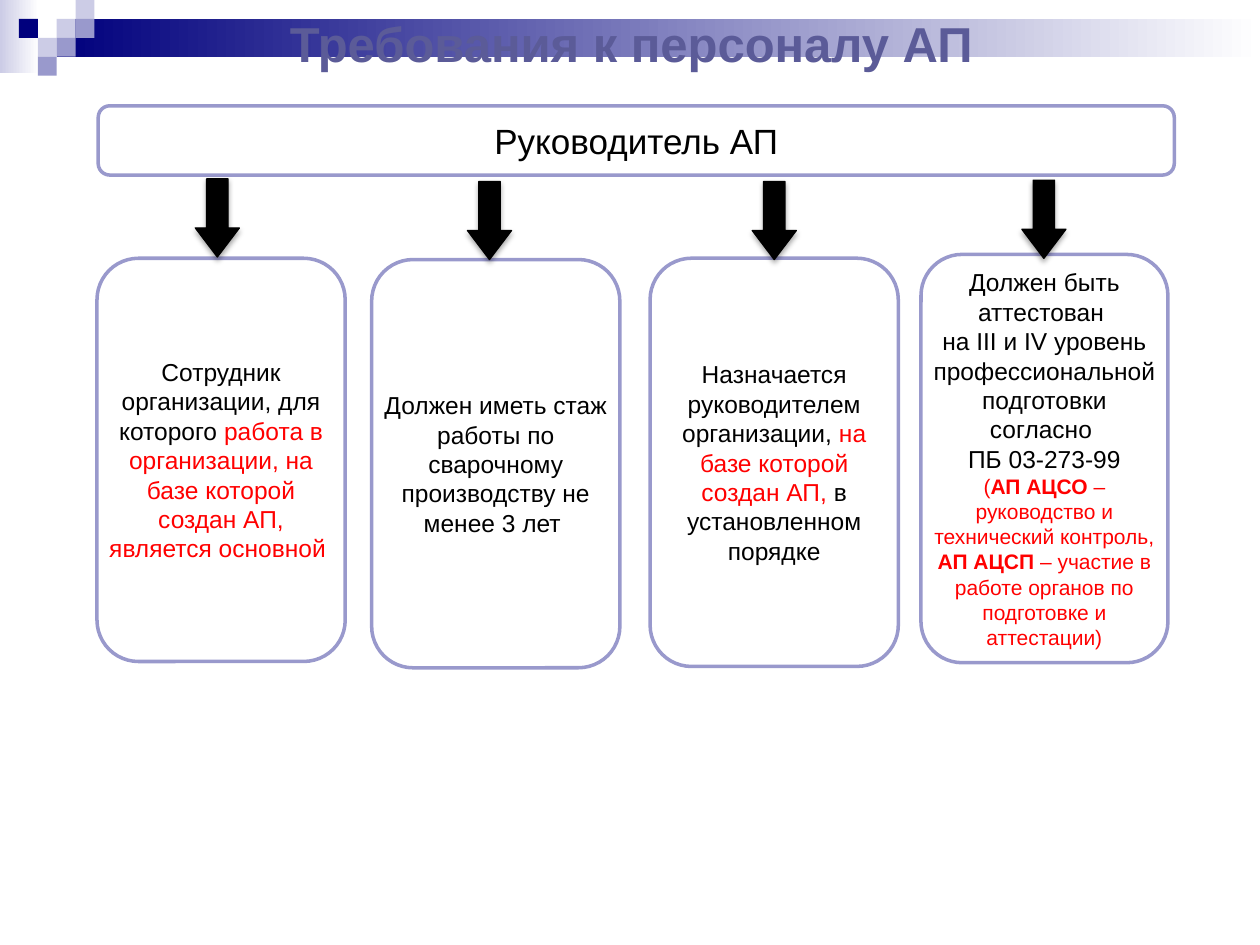
from lxml.etree import SubElement
from pptx import Presentation
from pptx.dml.color import RGBColor
from pptx.enum.shapes import MSO_SHAPE as SHAPE
from pptx.enum.text import MSO_ANCHOR as ANCHOR, MSO_AUTO_SIZE as FIT, PP_ALIGN as ALIGN
from pptx.oxml.ns import qn
from pptx.util import Inches, Pt

NAVY, LILAC, PALE, WHITE = "00007D", "9999CC", "CCCCE6", "FFFFFF"
TITLE, BLACK, RED = "5B5B98", "000000", "FF0000"
TILE_W, TILE_H = 1.5, 2


def rgb(value):
    return RGBColor.from_string(value)


class Deck:
    font = "Arial"

    def __init__(self, width, height):
        self.prs = Presentation()
        self.prs.slide_width, self.prs.slide_height = Inches(width), Inches(height)
        self.s = self.prs.slides.add_slide(self.prs.slide_layouts[5])

    def place(self, x, y, w, h):
        sw, sh = self.prs.slide_width, self.prs.slide_height
        return [round(v * full / 100) for v, full in ((x, sw), (y, sh), (w, sw), (h, sh))]

    def shape(self, kind, box, fill, line=None, width=1):
        sp = self.s.shapes.add_shape(kind, *self.place(*box))
        sp.shadow.inherit = False
        if fill:
            sp.fill.solid()
            sp.fill.fore_color.rgb = rgb(fill)
        if line:
            sp.line.color.rgb = rgb(line)
            sp.line.width = Pt(width)
        else:
            sp.line.fill.background()
        return sp

    def fade(self, box, start, end):
        sp = self.shape(SHAPE.RECTANGLE, box, None)
        sp.fill.gradient()
        sp.fill.gradient_angle = 0
        for stop, color, pos in zip(sp.fill.gradient_stops, (start, end), (0, 1)):
            stop.color.rgb = rgb(color)
            stop.position = pos

    def text(self, sp, runs):
        tf = sp.text_frame
        tf.word_wrap, tf.auto_size = True, FIT.NONE
        tf.vertical_anchor = ANCHOR.MIDDLE
        p = tf.paragraphs[0]
        p.alignment = ALIGN.CENTER
        for content, size, color, bold in runs:
            for i, part in enumerate(content.split("\n")):
                if i:
                    p.add_line_break()
                if not part:
                    continue
                r = p.add_run()
                r.text = part
                r.font.name, r.font.size, r.font.bold = self.font, Pt(size), bold
                r.font.color.rgb = rgb(color)
        return tf

    def title(self, box, content):
        sp = self.s.shapes.title
        sp.left, sp.top, sp.width, sp.height = self.place(*box)
        self.text(sp, [(content, 28, TITLE, True)])
        self.s.shapes._spTree.append(sp._element)

    def card(self, box, runs):
        sp = self.shape(SHAPE.ROUNDED_RECTANGLE, box, WHITE, LILAC, 2)
        tf = self.text(sp, runs)
        tf.margin_left = tf.margin_right = 0

    def arrow(self, x, y):
        sp = self.shape(SHAPE.DOWN_ARROW, (x, y, 3.5, 8.27), BLACK, BLACK, 0.75)
        sp.adjustments[0], sp.adjustments[1] = 0.485, 0.659
        effects = sp._element.spPr.find(qn("a:effectLst"))
        shadow = SubElement(effects, qn("a:outerShdw"), blurRad=str(Pt(3.1)),
                            dist=str(Pt(1.8)), dir="5400000", rotWithShape="0")
        color = SubElement(shadow, qn("a:srgbClr"), val=BLACK)
        SubElement(color, qn("a:alpha"), val="35000")


TILES = [(3, 1, PALE), (4, 0, PALE), (4, 1, LILAC), (2, 2, PALE),
         (1, 1, NAVY), (3, 2, LILAC), (2, 3, LILAC)]

CARDS = [
    ((7.7, 27.33, 19.7, 42.67), (15.5, 18.93), [
        ("Сотрудник организации, для которого ", 14, BLACK, False),
        ("работа в организации, на базе которой создан АП, является основной ", 14, RED, False)]),
    ((29.5, 27.47, 19.7, 43.2), (37.1, 19.2), [
        ("Должен иметь стаж работы по сварочному производству не менее 3 лет ", 14, BLACK, False)]),
    ((51.6, 27.33, 19.7, 43.2), (59.7, 19.2), [
        ("Назначается руководителем организации,", 14, BLACK, False),
        (" на базе которой создан АП,", 14, RED, False),
        (" в установленном порядке", 14, BLACK, False)]),
    ((73.1, 26.93, 19.6, 43.2), (81.1, 19.07), [
        ("Должен быть аттестован \nна III и IV уровень профессиональной подготовки "
         "согласно \nПБ 03-273-99\n", 14, BLACK, False),
        ("(", 12, RED, False),
        ("АП АЦСО ", 12, RED, True),
        ("– руководство и технический контроль, ", 12, RED, False),
        ("АП АЦСП ", 12, RED, True),
        ("– участие в работе органов по подготовке и аттестации)", 12, RED, False)]),
]


def main():
    deck = Deck(10, 7.5)
    deck.fade((0, 0, 3.1, 7.73), PALE, WHITE)
    deck.fade((4.5, 2, 95.5, 4), NAVY, WHITE)
    for col, row, color in TILES:
        deck.shape(SHAPE.RECTANGLE, (col * TILE_W, row * TILE_H, TILE_W, TILE_H), color)
    deck.title((5.1, 0, 90, 9.07), "Требования к персоналу АП")
    deck.card((7.8, 11.2, 85.4, 7.33), [("Руководитель АП", 20, BLACK, False)])
    for box, tip, runs in CARDS:
        deck.card(box, runs)
        deck.arrow(*tip)
    deck.prs.save("out.pptx")


if __name__ == "__main__":
    main()
